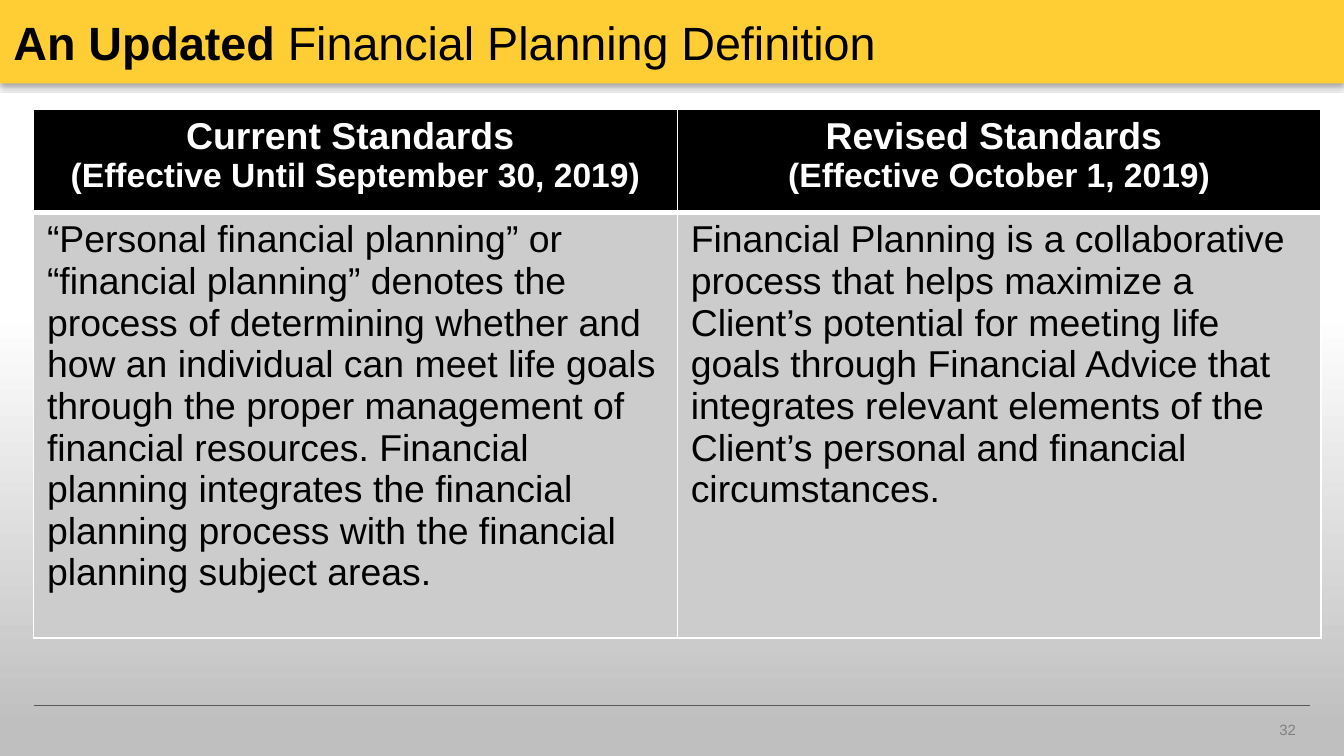
from lxml import etree
from pptx import Presentation
from pptx.dml.color import RGBColor
from pptx.enum.shapes import MSO_CONNECTOR, MSO_SHAPE
from pptx.enum.text import MSO_ANCHOR, MSO_AUTO_SIZE, PP_ALIGN
from pptx.oxml import parse_xml
from pptx.oxml.ns import nsdecls, qn
from pptx.util import Inches, Pt


def rgb(color):
    return RGBColor.from_string(color)


def add_text(paragraph, text, size=20, color="000000", bold=False, align=None):
    run = paragraph.add_run()
    run.text = text
    run.font.name = "Arial"
    run.font.size = Pt(size)
    run.font.bold = bold
    run.font.color.rgb = rgb(color)
    if align is not None:
        paragraph.alignment = align


# 16:9 page
prs = Presentation()
prs.slide_width = Inches(10)
prs.slide_height = Inches(10 * 9 / 16)
slide = prs.slides.add_slide(prs.slide_layouts[5])
shapes = slide.shapes

# Title band and shaded page area, each with a soft shadow below
band = shapes.add_shape(MSO_SHAPE.RECTANGLE, 0, 0, Inches(10), Inches(0.62))
band.fill.solid()
band.fill.fore_color.rgb = rgb("FFCE34")

page_area = shapes.add_shape(MSO_SHAPE.RECTANGLE, 0, Inches(0.69), Inches(10), Inches(4.94))
page_area.fill.gradient()
page_area.fill.gradient_angle = 90
stops = [("BFBFBF", 0.04), ("FFFFFF", 0.67)]
for stop, (color, position) in zip(page_area.fill.gradient_stops, stops):
    stop.color.rgb = rgb(color)
    stop.position = position

for panel in (band, page_area):
    panel.line.fill.background()
    panel._element.spPr.append(parse_xml(
        f'<a:effectLst {nsdecls("a")}><a:outerShdw blurRad="{Pt(3.1)}" dist="{Pt(1.8)}" '
        'dir="5400000" rotWithShape="0"><a:srgbClr val="000000"><a:alpha val="35000"/>'
        '</a:srgbClr></a:outerShdw></a:effectLst>'))

# Footer rule and page number
footer_rule = shapes.add_connector(
    MSO_CONNECTOR.STRAIGHT, Inches(0.25), Inches(5.25), Inches(9.75), Inches(5.25))
footer_rule.line.color.rgb = rgb("595959")
footer_rule.line.width = Pt(0.75)
etree.SubElement(footer_rule._element.spPr, qn("a:effectLst"))

page_number = shapes.add_textbox(Inches(9.42), Inches(5.31), Inches(0.58), Inches(0.3))
page_number.text_frame.word_wrap = True
add_text(page_number.text_frame.paragraphs[0], "32", size=8, color="808080")

# Title, brought in front of the band
title = shapes.title
title.left, title.top, title.width, title.height = 0, 0, Inches(8.78), Inches(0.62)
title.text_frame.auto_size = MSO_AUTO_SIZE.NONE
title.text_frame.vertical_anchor = MSO_ANCHOR.MIDDLE
heading = title.text_frame.paragraphs[0]
add_text(heading, "An Updated ", size=25, bold=True, align=PP_ALIGN.LEFT)
add_text(heading, "Financial Planning Definition", size=25)
shapes._spTree.append(title._element)

# Comparison of the two standards, one column each
standards = [
    ("Current Standards ", "(Effective Until September 30, 2019)",
     "“Personal financial planning” or “financial planning” denotes the process of "
     "determining whether and how an individual can meet life goals through the proper "
     "management of financial resources. Financial planning integrates the financial "
     "planning process with the financial planning subject areas."),
    ("Revised Standards ", "(Effective October 1, 2019)",
     "Financial Planning is a collaborative process that helps maximize a Client’s "
     "potential for meeting life goals through Financial Advice that integrates relevant "
     "elements of the Client’s personal and financial circumstances."),
]
table = shapes.add_table(
    2, 2, Inches(0.25), Inches(0.81), Inches(9.58), Inches(3.94)).table
table.rows[0].height = Inches(0.77)
table.rows[1].height = Inches(3.17)

for col, (name, dates, definition) in enumerate(standards):
    table.columns[col].width = Inches(4.79)
    header, body = table.cell(0, col), table.cell(1, col)
    header_style = dict(color="FFFFFF", bold=True, align=PP_ALIGN.CENTER)
    add_text(header.text_frame.paragraphs[0], name, **header_style)
    add_text(header.text_frame.add_paragraph(), dates, size=18, **header_style)
    add_text(body.text_frame.paragraphs[0], definition)

    # Cell fills and white borders, thick between header and body
    for cell, fill, thick_side in ((header, "000000", "B"), (body, "CCCCCC", "T")):
        cell.fill.solid()
        cell.fill.fore_color.rgb = rgb(fill)
        for index, side in enumerate("LRTB"):
            width = Pt(3 if side == thick_side else 1)
            cell._tc.tcPr.insert(index, parse_xml(
                f'<a:ln{side} {nsdecls("a")} w="{width}"><a:solidFill>'
                f'<a:srgbClr val="FFFFFF"/></a:solidFill></a:ln{side}>'))

prs.save("out.pptx")
